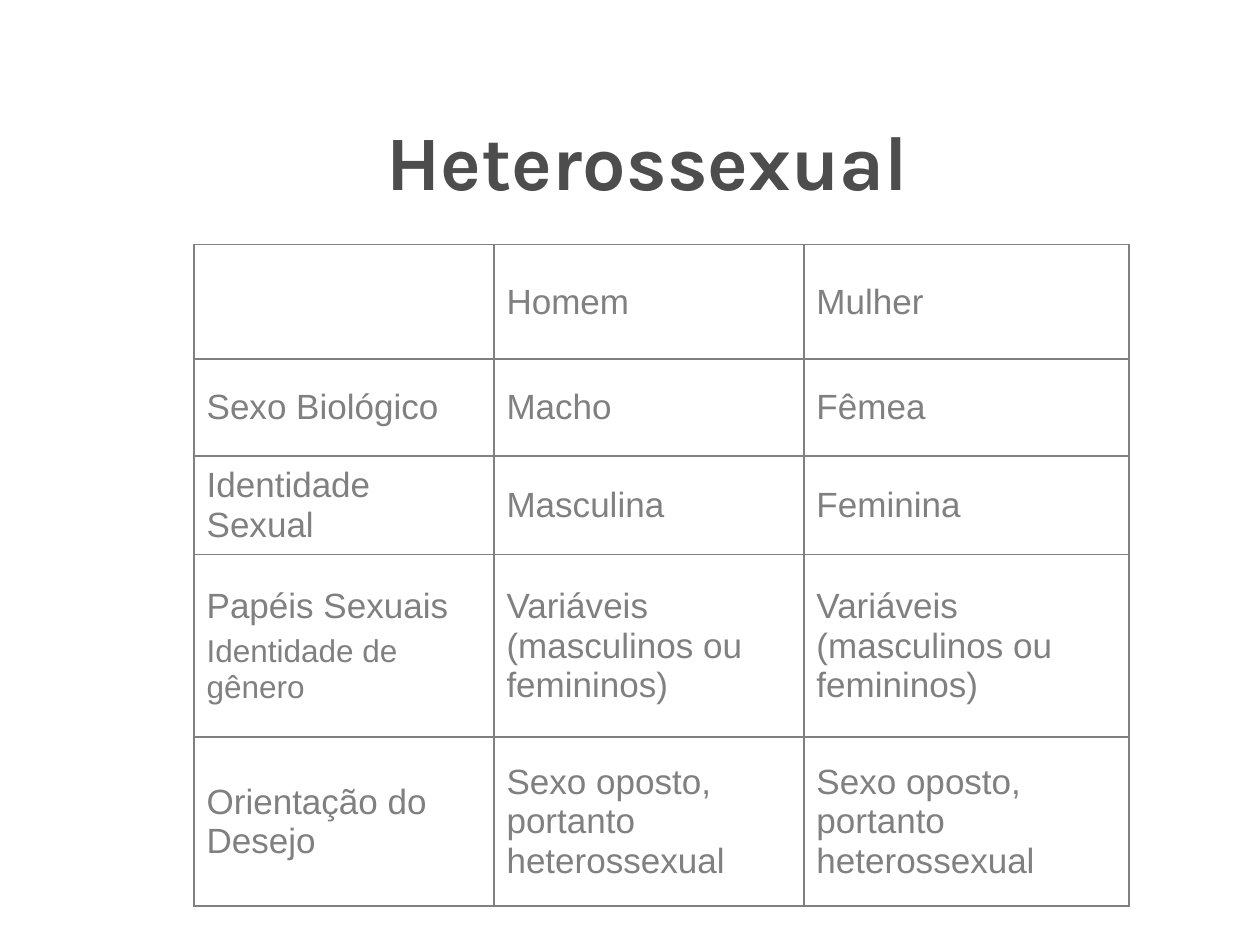
from pptx import Presentation
from pptx.dml.color import RGBColor
from pptx.enum.text import MSO_ANCHOR as Anchor, PP_ALIGN as Align
from pptx.oxml import parse_xml
from pptx.oxml.ns import nsdecls
from pptx.util import Inches, Pt

DARK_GRAY = RGBColor(0x4D, 0x4D, 0x4D)
GRAY = RGBColor(0x80, 0x80, 0x80)

COLUMN_WIDTHS = [2.38, 2.46, 2.58]
ROW_HEIGHTS = [0.91, 0.77, 0.78, 1.45, 1.34]
ROLES = "Variáveis (masculinos ou femininos)"
DESIRE = "Sexo oposto, portanto heterossexual"
# Each cell is a list of (text, size) paragraphs
ROWS = [
    [[], [("Homem", 20)], [("Mulher", 20)]],
    [[("Sexo Biológico", 20)], [("Macho", 20)], [("Fêmea", 20)]],
    [[("Identidade Sexual", 20)], [("Masculina", 20)], [("Feminina", 20)]],
    [[("Papéis Sexuais", 20), ("Identidade de gênero", 18)],
     [(ROLES, 20)], [(ROLES, 20)]],
    [[("Orientação do Desejo", 20)], [(DESIRE, 20)], [(DESIRE, 20)]],
]


def write(paragraph, text, *, size, font="Arial", color=GRAY, bold=False,
          align=Align.LEFT, line_spacing=None, space_before=None):
    paragraph.alignment = align
    paragraph.line_spacing = line_spacing
    paragraph.space_before = space_before
    run = paragraph.add_run()
    run.text = text
    run.font.name = font
    run.font.size = Pt(size)
    run.font.bold = bold
    run.font.color.rgb = color


class SlideBuilder:
    def __init__(self, slide, border_color=GRAY, border_width=Pt(1)):
        self.slide = slide
        self.border_color = border_color
        self.border_width = border_width

    def title(self, text, left, top, width, height):
        box = self.slide.shapes.add_textbox(
            Inches(left), Inches(top), Inches(width), Inches(height))
        frame = box.text_frame
        frame.word_wrap = True
        frame.vertical_anchor = Anchor.MIDDLE
        write(frame.paragraphs[0], text, size=44, font="Karla",
              color=DARK_GRAY, bold=True, align=Align.CENTER)

    def table(self, rows, left, top, column_widths, row_heights):
        table = self.slide.shapes.add_table(
            len(rows), len(column_widths), Inches(left), Inches(top),
            Inches(sum(column_widths)), Inches(sum(row_heights))).table
        table.first_row = table.horz_banding = False
        for column, width in zip(table.columns, column_widths):
            column.width = Inches(width)
        for row, height, contents in zip(table.rows, row_heights, rows):
            row.height = Inches(height)
            for cell, lines in zip(row.cells, contents):
                self.fill_cell(cell, lines)

    def fill_cell(self, cell, lines):
        cell.vertical_anchor = Anchor.MIDDLE
        cell.margin_left = cell.margin_right = Inches(0.1)
        cell.margin_top = cell.margin_bottom = Inches(0.05)
        self.outline_cell(cell)
        cell.fill.background()
        frame = cell.text_frame
        for index, (text, size) in enumerate(lines):
            paragraph = frame.add_paragraph() if index else frame.paragraphs[0]
            write(paragraph, text, size=size, line_spacing=1.01,
                  space_before=Pt(4.5) if index else None)

    def outline_cell(self, cell):
        properties = cell._tc.get_or_add_tcPr()
        for side in "LRTB":
            properties.append(parse_xml(
                f'<a:ln{side} {nsdecls("a")} w="{self.border_width}">'
                f'<a:solidFill><a:srgbClr val="{self.border_color}"/>'
                f'</a:solidFill></a:ln{side}>'))


def main():
    deck = Presentation()
    deck.slide_width, deck.slide_height = Inches(10), Inches(7.5)
    builder = SlideBuilder(deck.slides.add_slide(deck.slide_layouts[6]))
    builder.title("Heterossexual", 1.14, 0.76, 8, 1.01)
    builder.table(ROWS, 1.54, 1.94, COLUMN_WIDTHS, ROW_HEIGHTS)
    deck.save("out.pptx")


if __name__ == "__main__":
    main()
